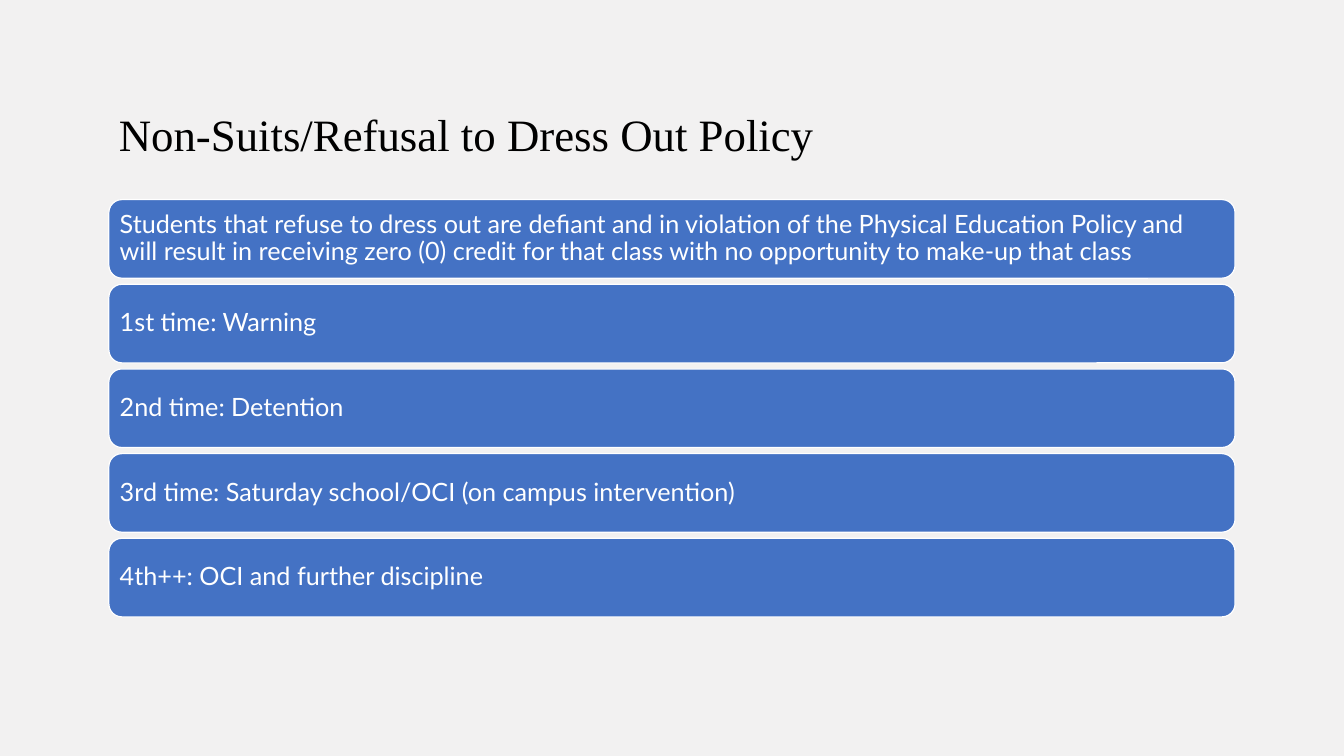
from pptx import Presentation
from pptx.dml.color import RGBColor
from pptx.enum import shapes, text
from pptx.util import Inches, Pt

GRAY = RGBColor(0xF2, 0xF1, 0xF1)
BLUE = RGBColor(0x44, 0x72, 0xC4)
WHITE = RGBColor(0xFF, 0xFF, 0xFF)
BLACK = RGBColor(0, 0, 0)

LEFT, WIDTH = 1.08, 11.17
RULES = [
    "Students that refuse to dress out are defiant and in violation of the "
    "Physical Education Policy and will result in receiving zero (0) credit "
    "for that class with no opportunity to make-up that class",
    "1st time: Warning",
    "2nd time: Detention",
    "3rd time: Saturday school/OCI (on campus intervention)",
    "4th++: OCI and further discipline",
]


def write(frame, words, face, size, color, anchor):
    frame.text = words
    frame.word_wrap = True
    frame.vertical_anchor = anchor
    para = frame.paragraphs[0]
    para.alignment = text.PP_ALIGN.LEFT
    para.line_spacing = 0.9
    font = para.runs[0].font
    font.name, font.size = face, Pt(size)
    font.color.rgb = color


def add_title(slide, left, top, width, height):
    box = slide.shapes.add_textbox(
        Inches(left), Inches(top), Inches(width), Inches(height))
    write(box.text_frame, "Non-Suits/Refusal to Dress Out Policy",
          "Times New Roman", 32, BLACK, text.MSO_ANCHOR.BOTTOM)


def add_rules(slide, left, top, width, height, gap=0.06):
    """Stack one bar per rule, evenly filling the given box."""
    step = (height + gap) / len(RULES)
    for row, rule in enumerate(RULES):
        bar = slide.shapes.add_shape(
            shapes.MSO_SHAPE.ROUNDED_RECTANGLE, Inches(left),
            Inches(top + row * step), Inches(width), Inches(step - gap))
        bar.shadow.inherit = False
        bar.fill.solid()
        bar.fill.fore_color.rgb = BLUE
        bar.line.color.rgb = WHITE
        bar.line.width = Pt(0.85)
        frame = bar.text_frame
        frame.margin_left = frame.margin_right = Inches(0.07)
        frame.margin_top = frame.margin_bottom = Inches(0.07)
        write(frame, rule, "Lato", 18, WHITE, text.MSO_ANCHOR.MIDDLE)


def main():
    deck = Presentation()
    deck.slide_width, deck.slide_height = Inches(13.33), Inches(7.5)
    slide = deck.slides.add_slide(deck.slide_layouts[6])
    slide.background.fill.solid()
    slide.background.fill.fore_color.rgb = GRAY
    add_title(slide, LEFT, 0.43, WIDTH, 1.22)
    add_rules(slide, LEFT, 1.98, WIDTH, 4.14)
    deck.save("out.pptx")


if __name__ == "__main__":
    main()
